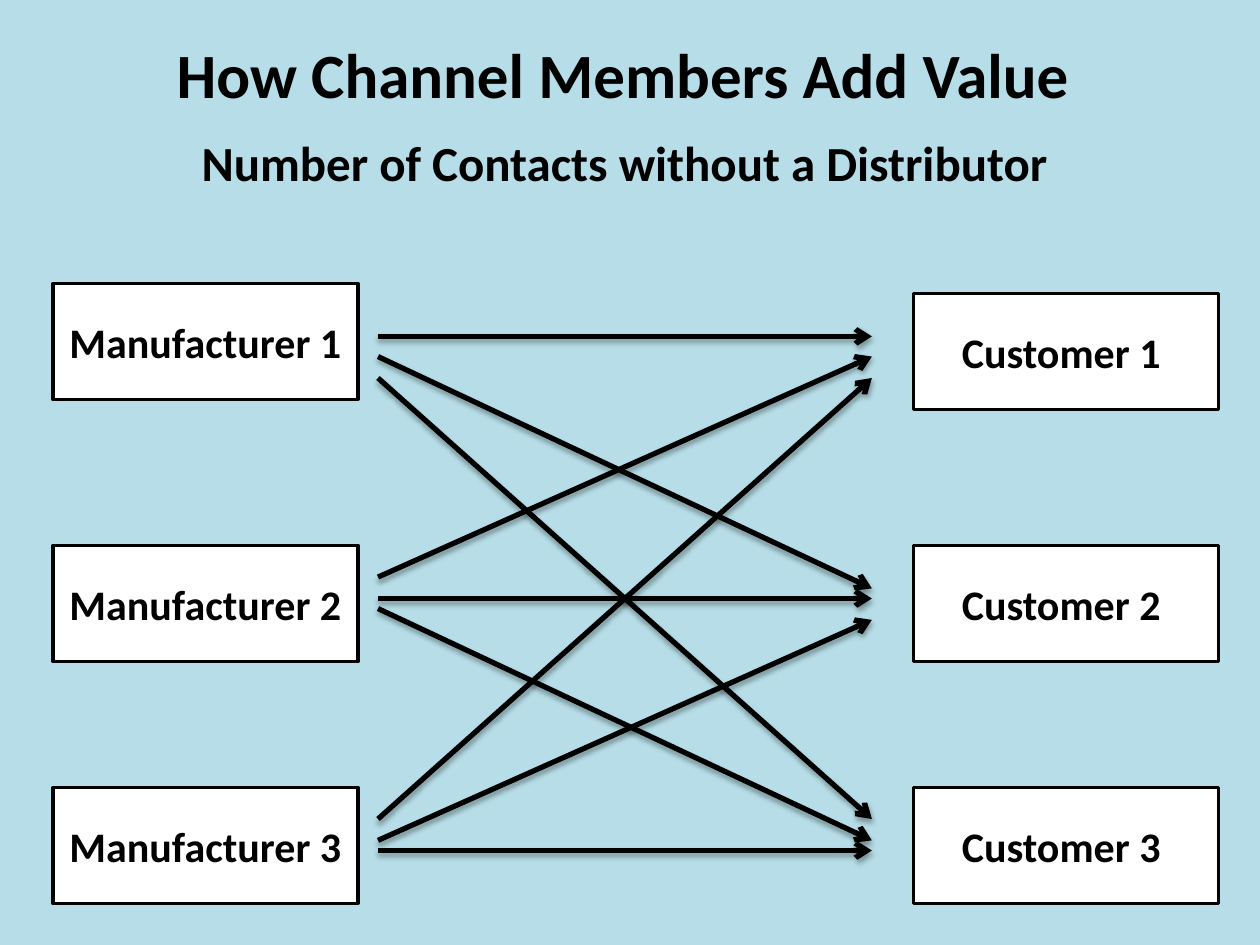
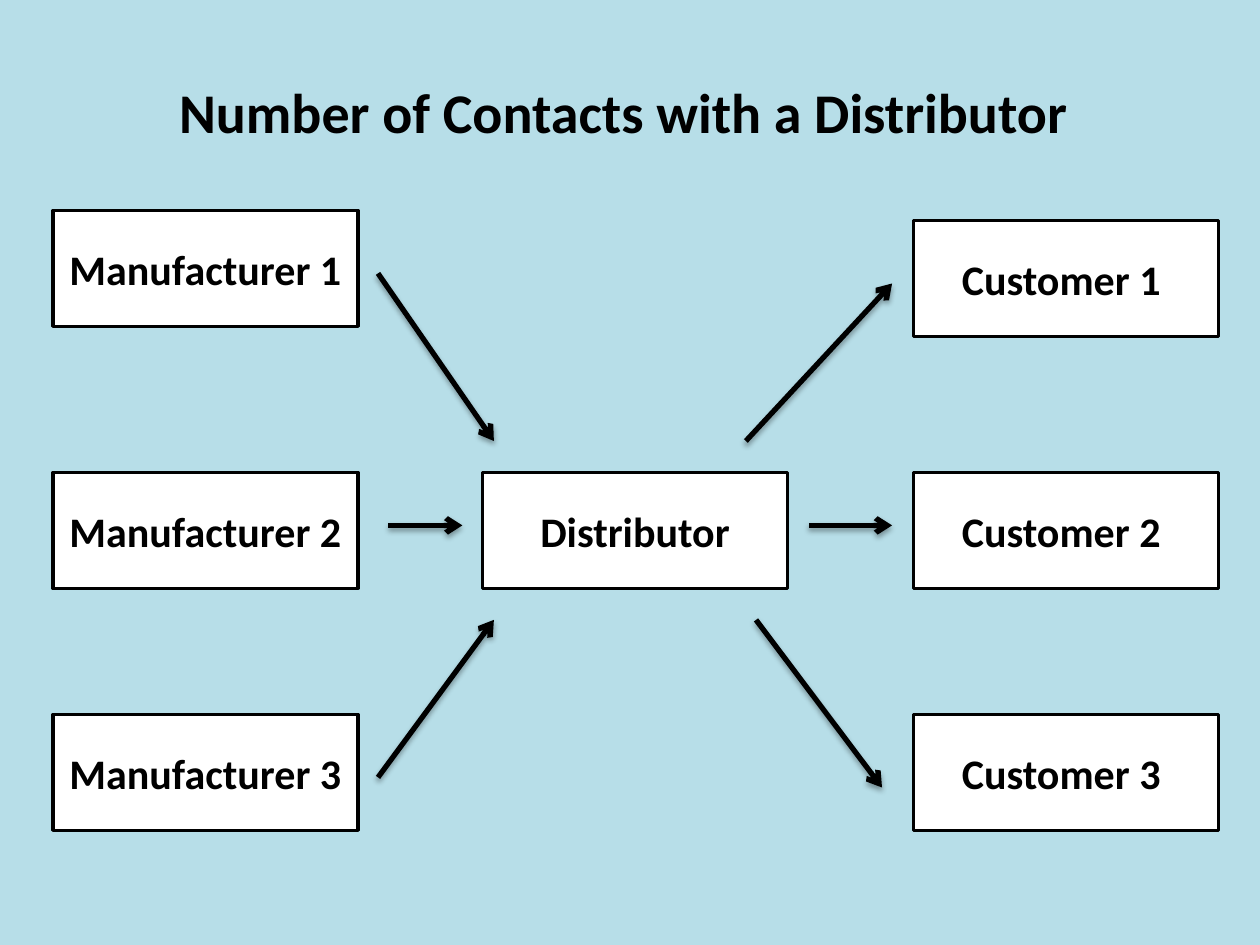
import pptx
import pptx.dml.color
import pptx.enum.shapes
import pptx.enum.text
import pptx.oxml
import pptx.oxml.ns
import pptx.util
from pptx.util import Inches, Pt

FONT = "Calibri"
COLORS = {"background": "B7DEE8", "ink": "000000", "box": "FFFFFF"}
RGB = {name: pptx.dml.color.RGBColor.from_string(value) for name, value in COLORS.items()}

BOX_WIDTH, BOX_HEIGHT = 2.42, 0.92
MANUFACTURER_LEFT, DISTRIBUTOR_LEFT, CUSTOMER_LEFT = 0.42, 3.83, 7.25
# Row offsets below the top of the first manufacturer
MANUFACTURER_ROWS = (0, 2.08, 4)
CUSTOMER_ROWS = (0.08, 2.08, 4)

ARROW_END = '<a:tailEnd %s type="arrow"/>' % pptx.oxml.ns.nsdecls("a")
ARROW_SHADOW = (
    '<a:effectLst %s><a:outerShdw blurRad="%d" dist="%d" dir="5400000" rotWithShape="0">'
    '<a:srgbClr val="%s"><a:alpha val="35000"/></a:srgbClr></a:outerShdw></a:effectLst>'
    % (pptx.oxml.ns.nsdecls("a"), Pt(3.1), Pt(1.8), COLORS["ink"])
)

# Every manufacturer reaches every customer: start and end heights
DIRECT_LEFT, DIRECT_RIGHT = 3, 6.92
DIRECT_CONTACTS = [
    (2.67, 2.67), (4.75, 4.75), (6.75, 6.75),
    (2.83, 4.67), (3, 6.5), (4.58, 2.83),
    (4.83, 6.67), (6.67, 4.92), (6.5, 3),
]
DISTRIBUTOR_CONTACTS = [
    (3, 2.17, 3.92, 3.5), (3.08, 4.17, 3.67, 4.17), (3, 6.17, 3.92, 4.92),
    (5.92, 3.5, 7.08, 2.25), (6.42, 4.17, 7.08, 4.17), (6, 4.92, 7, 6.25),
]

SLIDES = [
    {
        "title": "How Channel Members Add Value ", "title_size": 36,
        "title_top": 0.17, "title_height": 0.83,
        "subtitle": "Number of Contacts without a Distributor ",
        "top": 2.25, "distributor": False,
        "arrows": [(DIRECT_LEFT, start, DIRECT_RIGHT, end) for start, end in DIRECT_CONTACTS],
    },
    {
        "title": "Number of Contacts with a Distributor ", "title_size": 32,
        "title_top": 0.42, "title_height": 0.92,
        "subtitle": None,
        "top": 1.67, "distributor": True,
        "arrows": DISTRIBUTOR_CONTACTS,
    },
]


def write_centered(shape, text, size, anchor=pptx.enum.text.MSO_ANCHOR.MIDDLE):
    frame = shape.text_frame
    frame.text = text
    frame.word_wrap = True
    frame.auto_size = pptx.enum.text.MSO_AUTO_SIZE.NONE
    frame.vertical_anchor = anchor
    paragraph = frame.paragraphs[0]
    paragraph.alignment = pptx.enum.text.PP_ALIGN.CENTER
    font = paragraph.runs[0].font
    font.name, font.size, font.bold = FONT, Pt(size), True
    font.color.rgb = RGB["ink"]


prs = pptx.Presentation()
prs.slide_width, prs.slide_height = Inches(10), Inches(7.5)
title_only = prs.slide_layouts[5]

background = prs.slide_master.background.fill
background.solid()
background.fore_color.rgb = RGB["background"]

for content in SLIDES:
    slide = prs.slides.add_slide(title_only)

    title = slide.shapes.title
    title.left, title.top = Inches(0.5), Inches(content["title_top"])
    title.width, title.height = Inches(9), Inches(content["title_height"])
    write_centered(title, content["title"], content["title_size"])

    if content["subtitle"]:
        subtitle = slide.shapes.add_textbox(Inches(0.5), Inches(1), Inches(9), Inches(0.83))
        write_centered(subtitle, content["subtitle"], 28, pptx.enum.text.MSO_ANCHOR.TOP)

    members = []
    for number, row in enumerate(MANUFACTURER_ROWS, 1):
        members.append((f"Manufacturer {number}", MANUFACTURER_LEFT, row))
    for number, row in enumerate(CUSTOMER_ROWS, 1):
        members.append((f"Customer {number} ", CUSTOMER_LEFT, row))
    if content["distributor"]:
        members.append(("Distributor", DISTRIBUTOR_LEFT, MANUFACTURER_ROWS[1]))

    for label, left, row in members:
        member = slide.shapes.add_shape(
            pptx.enum.shapes.MSO_SHAPE.RECTANGLE, Inches(left), Inches(content["top"] + row),
            Inches(BOX_WIDTH), Inches(BOX_HEIGHT))
        member.shadow.inherit = False
        member.fill.solid()
        member.fill.fore_color.rgb = RGB["box"]
        member.line.color.rgb = RGB["ink"]
        member.line.width = Pt(2)
        write_centered(member, label, 24)

    for ends in content["arrows"]:
        contact = slide.shapes.add_connector(
            pptx.enum.shapes.MSO_CONNECTOR.STRAIGHT, *map(Inches, ends))
        contact.line.color.rgb = RGB["ink"]
        contact.line.width = Pt(3)
        contact.line._get_or_add_ln().append(pptx.oxml.parse_xml(ARROW_END))
        contact._element.spPr.append(pptx.oxml.parse_xml(ARROW_SHADOW))

prs.save("out.pptx")
